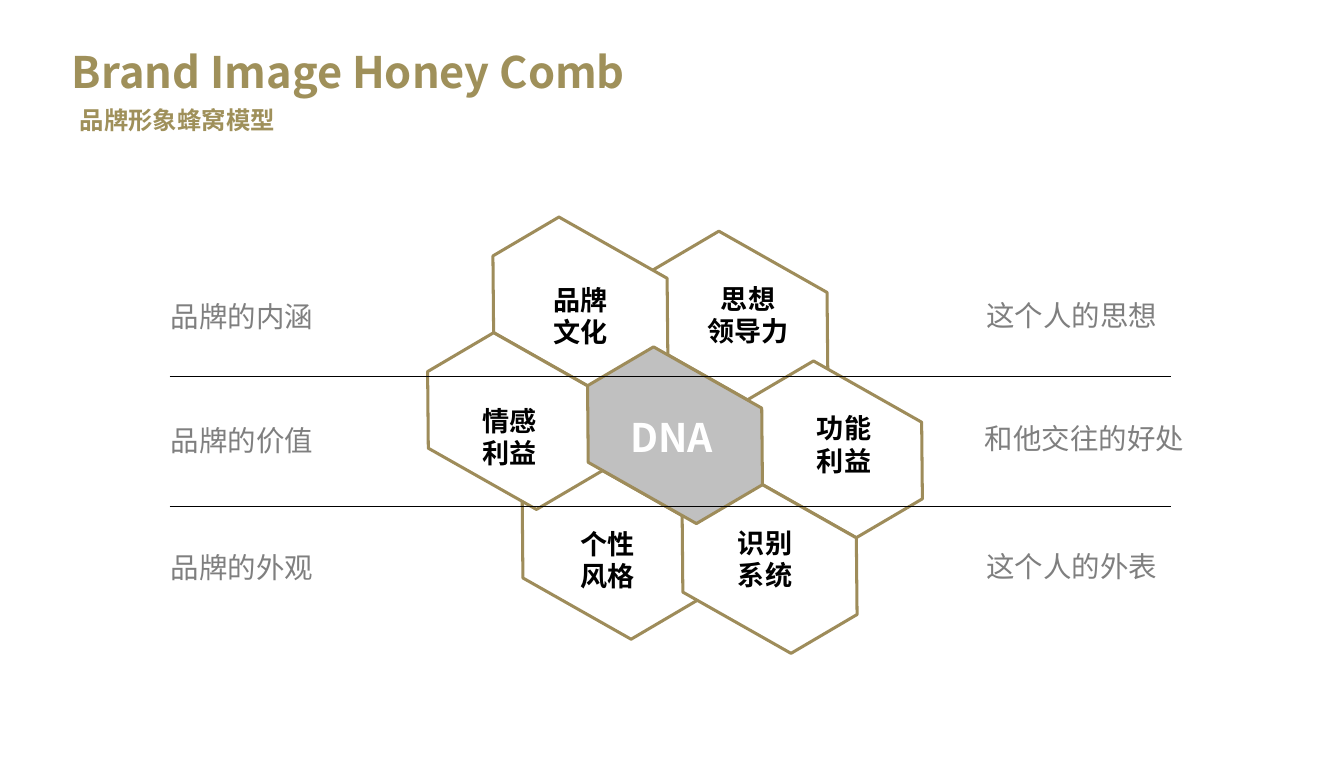
from dataclasses import dataclass

from lxml import etree
from pptx import Presentation, util as u
from pptx.dml import color as clr
from pptx.enum import shapes as sh, text as tx
from pptx.oxml import ns

WIDE, HIGH = u.Inches(13.78), u.Inches(7.87)
FONT = "Noto Sans CJK SC"
HUES = {"gold": "9E8C5A", "title": "9F905A", "core": "C0C0C0",
        "white": "FFFFFF", "black": "000000", "note": "7F7F7F"}

# All places and sizes are percent of the slide's width and height.
HEX = (14.95, 17.28)
MID = (50.22, 56.67)
EAST = (11.9, 1.84)      # step to the next cell of a row
SOUTH = (-4.86, 15.06)   # step to the next row
TAG = (11.97, 9.91)      # box of a cell's label


@dataclass
class Cell:
    words: str
    east: int
    south: int
    shift: tuple[float, float]  # label centre relative to cell centre
    fill: str = "white"
    ink: str = "black"
    size: int = 20

    def centre(self) -> tuple[float, float]:
        return (MID[0] + self.east * EAST[0] + self.south * SOUTH[0],
                MID[1] + self.east * EAST[1] + self.south * SOUTH[1])


@dataclass
class Label:
    words: str
    box: tuple[float, float, float, float]
    size: int
    ink: str
    bold: bool = True
    align: tx.PP_ALIGN = tx.PP_ALIGN.CENTER


CELLS = [
    Cell("思想\n领导力", 0, -1, (0.58, -0.57)),
    Cell("个性\n风格", 0, 1, (-0.15, 1.21)),
    Cell("功能\n利益", 1, 0, (0.69, -0.57)),
    Cell("识别\n系统", 1, 1, (-0.33, -0.76)),
    Cell("品牌\n文化", -1, -1, (0, 1.4)),
    Cell("情感\n利益", -1, 0, (-0.4, 2.1)),
    Cell("DNA", 0, 0, (-0.26, 1.4), "core", "white", 29),
]
# Left note, right note, their tops, width of the right one
ROWS = [
    ("品牌的内涵", "这个人的思想", 38.37, 38.12, 18.29),
    ("品牌的价值", "和他交往的好处", 54.51, 54.26, 20.17),
    ("品牌的外观", "这个人的外表", 71.03, 70.9, 18.29),
]
RULES = (49.05, 65.95)
HEADS = [
    Label("Brand Image Honey Comb", (4.64, 5.21, 83.89, 8.13), 32, "title",
          align=tx.PP_ALIGN.LEFT),
    Label("品牌形象蜂窝模型", (5.22, 13.09, 50, 5.08), 18, "title",
          align=tx.PP_ALIGN.LEFT),
]


def across(share: float) -> int:
    return round(WIDE * share / 100)


def down(share: float) -> int:
    return round(HIGH * share / 100)


def paint(fill, hue: str) -> None:
    fill.solid()
    fill.fore_color.rgb = clr.RGBColor.from_string(HUES[hue])


def draw_cell(group, cell: Cell) -> None:
    x, y = cell.centre()
    wide, high = HEX
    comb = group.shapes.add_shape(
        sh.MSO_SHAPE.HEXAGON, across(x - wide / 2), down(y - high / 2),
        across(wide), down(high))
    comb.adjustments[0], comb.adjustments[1] = 0.289, 1.155
    comb.rotation = 29.5
    comb.shadow.inherit = False
    paint(comb.fill, cell.fill)
    paint(comb.line.fill, "gold")
    comb.line.width = u.Pt(2.25)


def draw_label(slide, label: Label) -> None:
    x, y, wide, high = label.box
    frame = slide.shapes.add_textbox(
        across(x), down(y), across(wide), down(high)).text_frame
    frame.word_wrap = True
    frame.auto_size = tx.MSO_AUTO_SIZE.SHAPE_TO_FIT_TEXT
    frame.text = label.words
    for line in frame.paragraphs:
        line.alignment = label.align
        for run in line.runs:
            run.font.size = u.Pt(label.size)
            run.font.bold = label.bold
            paint(run.font.fill, label.ink)
            run.font.name = FONT
            east = etree.SubElement(run.font._element, ns.qn("a:ea"))
            east.set("typeface", FONT)


def draw_rule(slide, y: float) -> None:
    rule = slide.shapes.add_connector(
        sh.MSO_CONNECTOR.STRAIGHT, across(12.63), down(y),
        across(87.16), down(y))
    paint(rule.line.fill, "black")
    rule.line.width = u.Pt(0.75)
    etree.SubElement(rule._element.spPr, ns.qn("a:effectLst"))


def tag(cell: Cell) -> Label:
    """Place a cell's label near the cell's centre."""
    x, y = cell.centre()
    wide, high = TAG
    box = (x + cell.shift[0] - wide / 2, y + cell.shift[1] - high / 2,
           wide, high)
    return Label(cell.words, box, cell.size, cell.ink)


def main() -> None:
    deck = Presentation()
    deck.slide_width, deck.slide_height = WIDE, HIGH
    slide = deck.slides.add_slide(deck.slide_layouts[6])
    group = slide.shapes.add_group_shape()
    for cell in CELLS:
        draw_cell(group, cell)
    for cell in CELLS:
        draw_label(slide, tag(cell))
    for y in RULES:
        draw_rule(slide, y)
    for left, right, ltop, rtop, wide in ROWS:
        for words, box in ((left, (8.85, ltop, 18.29, 5.84)),
                           (right, (70.61, rtop, wide, 5.84))):
            draw_label(slide, Label(words, box, 21, "note", False))
    for head in HEADS:
        draw_label(slide, head)
    deck.save("out.pptx")


if __name__ == "__main__":
    main()
